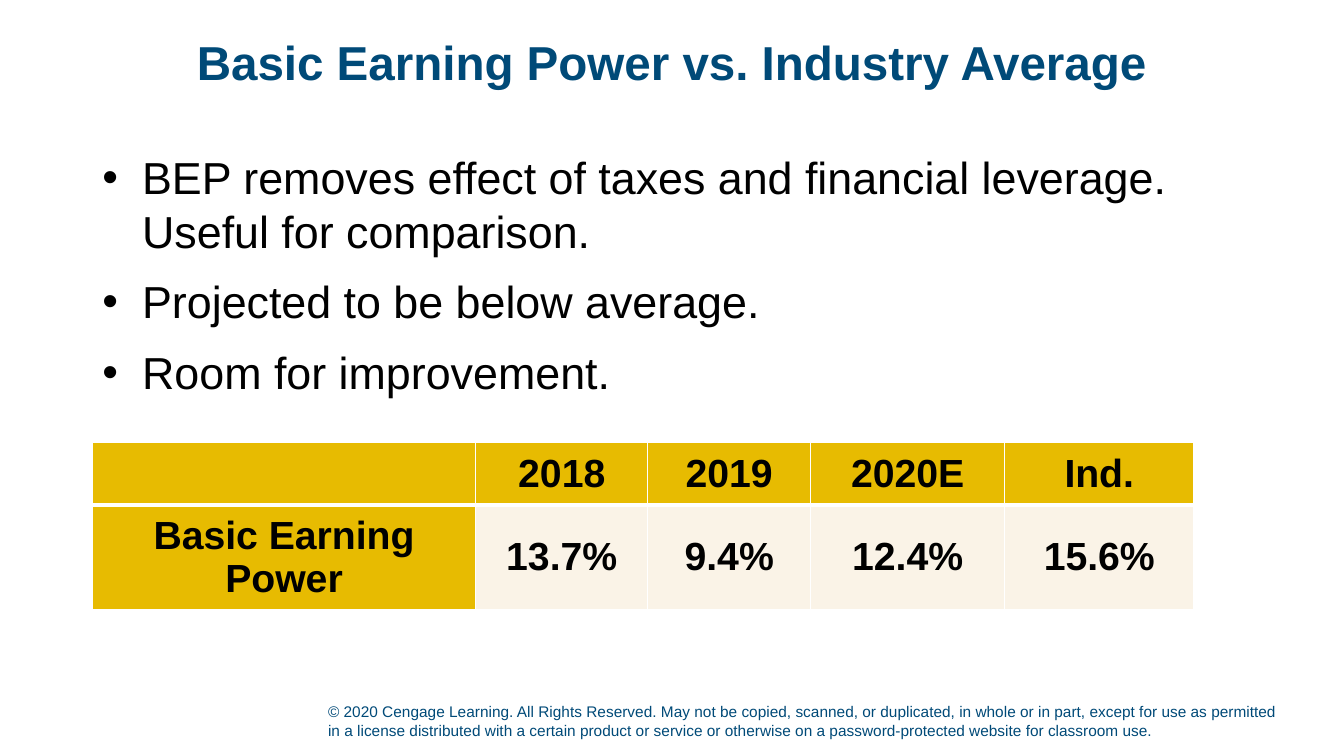
from dataclasses import dataclass

from pptx import Presentation
from pptx import util as u
from pptx.dml import color
from pptx.enum import text
from pptx.oxml import parse_xml
from pptx.oxml import ns

PX = 9525
FONT = "Arial"
COLORS = {
    "navy": "004A78",
    "black": "000000",
    "white": "FFFFFF",
    "gold": "E7BB01",
    "cream": "FAF3E7",
}


@dataclass(frozen=True)
class TextBlock:
    left: int
    top: int
    width: int
    height: int
    lines: tuple[str, ...]
    size: int
    color: str
    anchor: text.MSO_ANCHOR
    align: text.PP_ALIGN = text.PP_ALIGN.LEFT
    bold: bool = False
    bullets: bool = False
    line_spacing: float = 1.0


BLOCKS = (
    TextBlock(
        303, 661, 924, 48,
        ("© 2020 Cengage Learning. All Rights Reserved. May not be copied, scanned, "
         "or duplicated, in whole or in part, except for use as permitted in a license "
         "distributed with a certain product or service or otherwise on a "
         "password-protected website for classroom use.",),
        11, "navy", text.MSO_ANCHOR.BOTTOM,
    ),
    TextBlock(
        88, 14, 1104, 96, ("Basic Earning Power vs. Industry Average",),
        34, "navy", text.MSO_ANCHOR.MIDDLE, text.PP_ALIGN.CENTER,
        bold=True, line_spacing=0.9,
    ),
    TextBlock(
        88, 138, 1104, 240,
        ("BEP removes effect of taxes and financial leverage. Useful for comparison.",
         "Projected to be below average.",
         "Room for improvement."),
        32, "black", text.MSO_ANCHOR.TOP, bullets=True,
    ),
)

TABLE_LEFT, TABLE_TOP = 88, 421
COLUMN_WIDTHS = (365, 164, 155, 185, 180)
ROW_HEIGHTS = (60, 86)
RATIOS = (
    ("", "2018", "2019", "2020E", "Ind."),
    ("Basic Earning Power", "13.7%", "9.4%", "12.4%", "15.6%"),
)


def px(length: int) -> u.Emu:
    return u.Emu(length * PX)


def rgb(name: str) -> color.RGBColor:
    return color.RGBColor.from_string(COLORS[name])


def style_font(para, size: int, color_name: str, bold: bool) -> None:
    font = para.font
    font.name = FONT
    font.size = u.Pt(size)
    font.bold = bold
    font.color.rgb = rgb(color_name)


def add_bullet(para) -> None:
    para.space_after = u.Pt(6)
    properties = para._p.get_or_add_pPr()
    properties.set("marL", str(px(38)))
    properties.set("indent", str(-px(38)))
    for element in (f'buFont {ns.nsdecls("a")} typeface="{FONT}"',
                    f'buChar {ns.nsdecls("a")} char="•"'):
        properties.append(parse_xml(f"<a:{element}/>"))


def add_text(page, block: TextBlock) -> None:
    box = page.shapes.add_textbox(
        px(block.left), px(block.top), px(block.width), px(block.height))
    frame = box.text_frame
    frame.word_wrap = True
    frame.vertical_anchor = block.anchor
    for index, line in enumerate(block.lines):
        para = frame.add_paragraph() if index else frame.paragraphs[0]
        para.text = line
        para.alignment = block.align
        para.line_spacing = block.line_spacing
        if index:
            para.space_before = u.Pt(6)
        if block.bullets:
            add_bullet(para)
        style_font(para, block.size, block.color, block.bold)


def add_borders(cell, top: int, bottom: int) -> None:
    properties = cell._tc.get_or_add_tcPr()
    widths = {"lnL": 1, "lnR": 1, "lnT": top, "lnB": bottom}
    for index, (side, width) in enumerate(widths.items()):
        properties.insert(index, parse_xml(
            f'<a:{side} {ns.nsdecls("a")} w="{u.Pt(width)}"><a:solidFill>'
            f'<a:srgbClr val="{COLORS["white"]}"/></a:solidFill></a:{side}>'))


def add_ratio_table(page) -> None:
    table = page.shapes.add_table(
        len(ROW_HEIGHTS), len(COLUMN_WIDTHS), px(TABLE_LEFT), px(TABLE_TOP),
        px(sum(COLUMN_WIDTHS)), px(sum(ROW_HEIGHTS))).table
    table.horz_banding = False
    for column, width in zip(table.columns, COLUMN_WIDTHS):
        column.width = px(width)
    for row, height in zip(table.rows, ROW_HEIGHTS):
        row.height = px(height)
    for row_index, labels in enumerate(RATIOS):
        for column_index, label in enumerate(labels):
            cell = table.cell(row_index, column_index)
            is_value = row_index > 0 and column_index > 0
            cell.fill.solid()
            cell.fill.fore_color.rgb = rgb("cream" if is_value else "gold")
            cell.vertical_anchor = text.MSO_ANCHOR.MIDDLE
            cell.margin_left = cell.margin_right = px(7)
            cell.margin_top = cell.margin_bottom = px(0 if is_value else 5)
            para = cell.text_frame.paragraphs[0]
            para.text = label
            para.alignment = text.PP_ALIGN.CENTER
            style_font(para, 28, "black", True)
            add_borders(cell, *((3, 1) if row_index else (1, 3)))


def main() -> None:
    deck = Presentation()
    deck.slide_width, deck.slide_height = px(1280), px(720)
    page = deck.slides.add_slide(deck.slide_layouts[6])
    for block in BLOCKS:
        add_text(page, block)
    add_ratio_table(page)
    deck.save("out.pptx")


if __name__ == "__main__":
    main()
